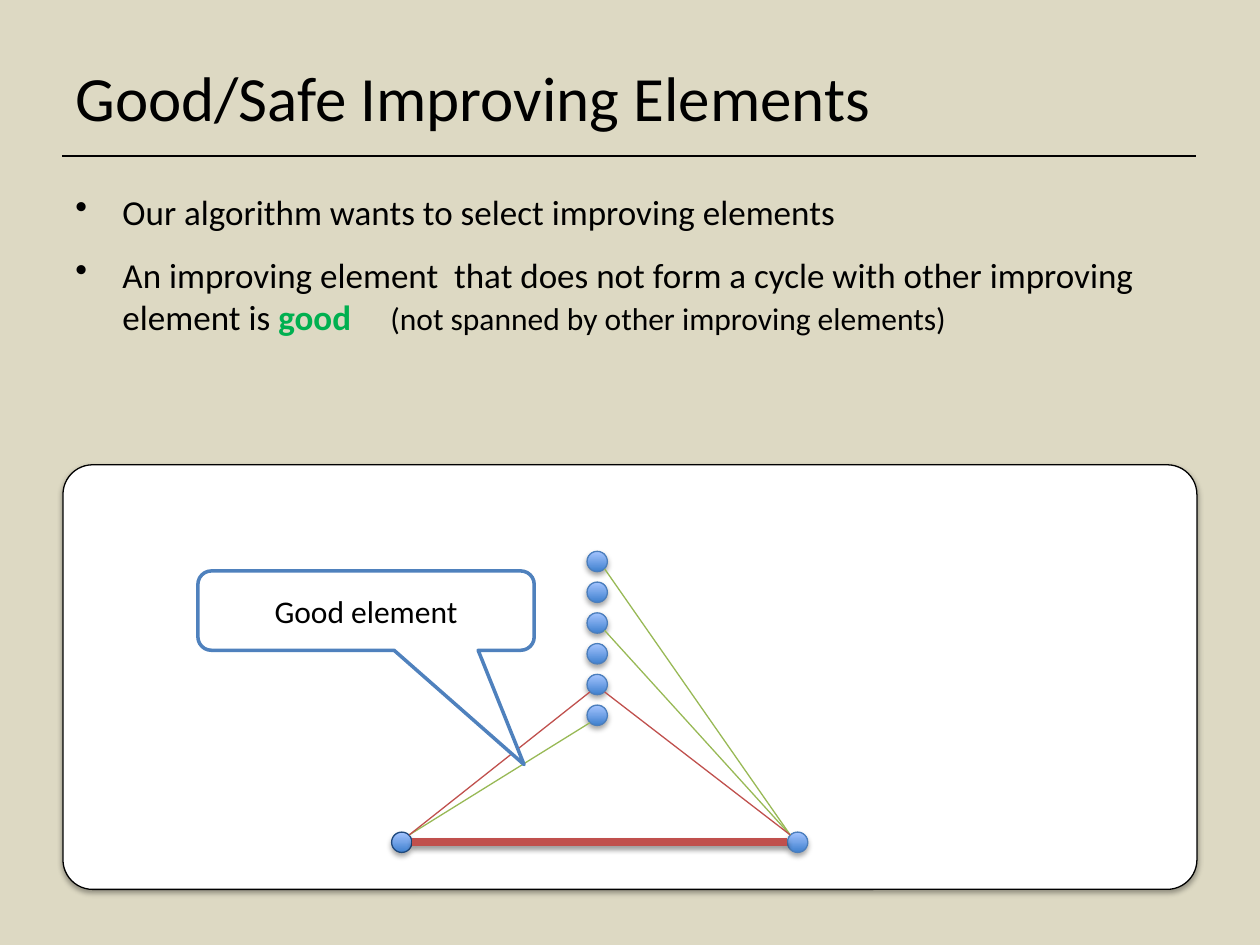
from dataclasses import dataclass

from lxml.etree import SubElement
from pptx import Presentation
from pptx.dml.color import RGBColor
from pptx.enum.shapes import MSO_CONNECTOR, MSO_SHAPE
from pptx.enum.text import MSO_ANCHOR, PP_ALIGN
from pptx.oxml import parse_xml
from pptx.oxml.ns import nsdecls, qn
from pptx.util import Cm, Pt


@dataclass(frozen=True)
class Theme:
    face: str = "Calibri"
    title: int = 36
    body: int = 20
    note: int = 18
    ink: str = "000000"
    paper: str = "DDD9C3"
    white: str = "FFFFFF"
    good: str = "00B050"
    red: str = "C0504D"
    green: str = "98B955"
    blue: str = "4F81BD"
    navy: str = "1F497D"
    rim: str = "4B7EBC"
    deep: str = "3F80CE"
    pale: str = "A4C4FF"


THEME = Theme()
LEFT, WIDTH = 1.27, 22.86
SIZE = 0.41
EDGE = SIZE / 2
DIAG = 0.15
BASE = 16.98


def color(code):
    return RGBColor.from_string(code)


def style(font, size, code=THEME.ink):
    font.name = THEME.face
    font.size = Pt(size)
    font.color.rgb = color(code)


def shade(shape, alpha=35):
    props = shape._element.spPr
    for old in props.findall(qn("a:effectLst")):
        props.remove(old)
    props.append(parse_xml(
        f'<a:effectLst {nsdecls("a")}>'
        f'<a:outerShdw blurRad="{Pt(3.1)}" dist="{Pt(1.8)}" dir="5400000" rotWithShape="0">'
        f'<a:srgbClr val="{THEME.ink}"><a:alpha val="{alpha * 1000}"/></a:srgbClr>'
        '</a:outerShdw></a:effectLst>'))


def add_text(slide, top, height, anchor=MSO_ANCHOR.TOP):
    box = slide.shapes.add_textbox(Cm(LEFT), Cm(top), Cm(WIDTH), Cm(height))
    frame = box.text_frame
    frame.word_wrap = True
    frame.vertical_anchor = anchor
    return frame


def add_title(slide, text):
    par = add_text(slide, 0.76, 2.36, MSO_ANCHOR.MIDDLE).paragraphs[0]
    par.text = text
    style(par.font, THEME.title)


def set_bullet(par):
    props = par._p.get_or_add_pPr()
    props.set("marL", str(Cm(0.95)))
    props.set("indent", str(Cm(-0.95)))
    mark = SubElement(props, qn("a:buChar"))
    mark.set("char", "•")


def add_body(slide):
    frame = add_text(slide, 3.71, 13.31)
    first, second = frame.paragraphs[0], frame.add_paragraph()
    for par in (first, second):
        par.space_before = Pt(12.2)
        set_bullet(par)
    first.text = "Our algorithm wants to select improving elements"
    style(first.font, THEME.body)
    runs = (
        ("An improving element  that does not form a cycle with other improving element is ",
         THEME.body, THEME.ink, False),
        ("good \t", THEME.body, THEME.good, True),
        ("(not spanned by other improving elements)", THEME.note, THEME.ink, False),
    )
    for text, size, code, bold in runs:
        run = second.add_run()
        run.text = text
        style(run.font, size, code)
        run.font.bold = bold


def add_line(slide, start, end, code, width=0.75):
    line = slide.shapes.add_connector(
        MSO_CONNECTOR.STRAIGHT, *(Cm(num) for num in (*start, *end)))
    line.line.color.rgb = color(code)
    line.line.width = Pt(width)
    SubElement(line._element.spPr, qn("a:effectLst"))
    return line


def add_shape(slide, kind, spot, rim, width, bends=()):
    shape = slide.shapes.add_shape(kind, *(Cm(num) for num in spot))
    shape.shadow.inherit = False
    for pos, bend in enumerate(bends):
        shape.adjustments[pos] = bend
    shape.fill.solid()
    shape.fill.fore_color.rgb = color(THEME.white)
    shape.line.color.rgb = color(rim)
    shape.line.width = Pt(width)
    return shape


def add_dot(slide, mid, rim=THEME.rim):
    x, y = mid
    dot = add_shape(slide, MSO_SHAPE.OVAL, (x - EDGE, y - EDGE, SIZE, SIZE), rim, 0.75)
    dot.fill.gradient()
    dot.fill.gradient_angle = 90
    for stop, code in zip(dot.fill.gradient_stops, (THEME.deep, THEME.pale)):
        stop.color.rgb = color(code)
    stops = dot.fill.gradient_stops
    stops[0].position, stops[1].position = 0, 1
    shade(dot)


def shift(mid, across, down):
    return mid[0] + across, mid[1] + down


def add_graph(slide):
    west, east = (8.1, BASE), (16.08, BASE)
    stack = [(12.04, 11.32 + 0.62 * step) for step in range(6)]
    add_dot(slide, west, THEME.navy)
    for mid in (east, *reversed(stack)):
        add_dot(slide, mid)
    for pos, code in ((2, THEME.green), (0, THEME.green), (4, THEME.red)):
        add_line(slide, shift(east, -DIAG, -DIAG), shift(stack[pos], DIAG, DIAG), code)
    for pos, code in ((5, THEME.green), (4, THEME.red)):
        add_line(slide, shift(west, DIAG, -DIAG), shift(stack[pos], -DIAG, DIAG), code)
    base = add_line(slide, shift(west, EDGE, 0), shift(east, -EDGE, 0), THEME.red, 4.5)
    shade(base, 38)


def add_callout(slide, text):
    shape = add_shape(slide, MSO_SHAPE.ROUNDED_RECTANGULAR_CALLOUT,
                      (3.99, 11.51, 6.78, 1.6), THEME.blue, 2, (0.47, 1.94, 0.17))
    shape.text_frame.vertical_anchor = MSO_ANCHOR.MIDDLE
    par = shape.text_frame.paragraphs[0]
    par.text = text
    par.alignment = PP_ALIGN.CENTER
    par.space_before = par.space_after = Pt(12)
    style(par.font, THEME.note)


def main():
    deck = Presentation()
    deck.slide_width, deck.slide_height = Cm(25.4), Cm(19.05)
    slide = deck.slides.add_slide(deck.slide_layouts[6])
    slide.background.fill.solid()
    slide.background.fill.fore_color.rgb = color(THEME.paper)
    add_line(slide, (1.25, 3.15), (24.1, 3.15), THEME.ink, 1)
    add_title(slide, "Good/Safe Improving Elements")
    add_body(slide)
    panel = add_shape(slide, MSO_SHAPE.ROUNDED_RECTANGLE,
                      (LEFT, 9.37, WIDTH, 8.56), THEME.ink, 0.75, (0.07,))
    shade(panel)
    add_graph(slide)
    add_callout(slide, "Good element")
    deck.save("out.pptx")


if __name__ == "__main__":
    main()
